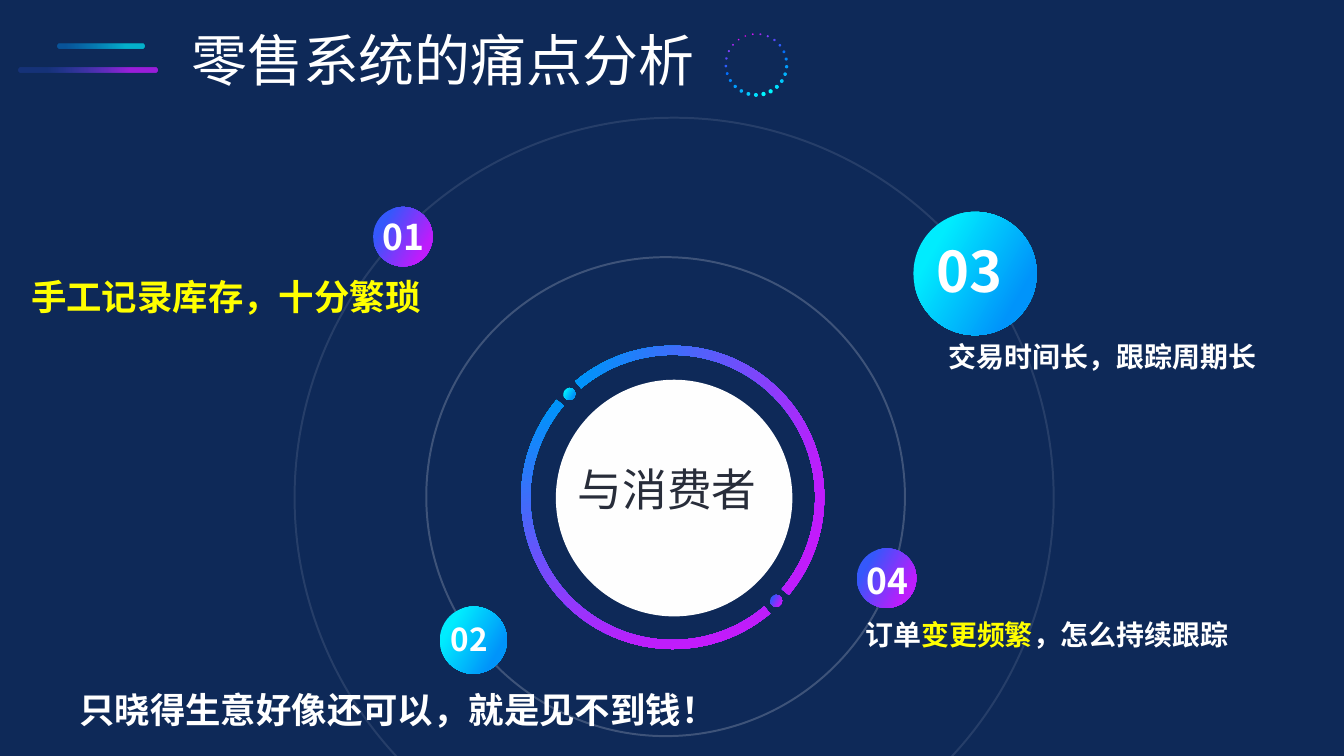
from dataclasses import dataclass
from math import cos, radians, sin

from lxml import etree
from pptx import Presentation
from pptx import util as u
from pptx.dml import color
from pptx.enum import shapes, text
from pptx.oxml import ns

COLS, ROWS = 18.98, 10.67
CELL = u.Inches(1)
KIND = shapes.MSO_SHAPE


@dataclass(frozen=True)
class Theme:
    font: str = "Noto Sans CJK SC"
    back: str = "0E2958"
    white: str = "FFFFFF"
    disc: str = "FEFEFE"
    dark: str = "282D3A"
    gold: str = "FFFF00"
    title: float = 56.9
    core: float = 45.5
    large: float = 36
    small: float = 28.4
    tiny: float = 32
    cool: tuple = ((21, "00ECFE", 100), (80, "0094FA", 100))
    warm: tuple = ((21, "3558FB", 100), (80, "BE1DFB", 100))
    ring: tuple = ((0, "00ECFE", 100), (27, "0094FA", 100),
                   (76, "BE1DFB", 100), (100, "FC02F9", 100))
    upper: tuple = ((10, "0094FA", 40), (79, "00ECFE", 70))
    lower: tuple = ((21, "3558FB", 20), (80, "BE1DFB", 80))
    dots: tuple = ("FC02F9", "D813FB", "A527F0", "7D3EFC", "5748FD",
                   "2D5CFA", "036EFA", "0285FB", "029CFD", "02B2FD",
                   "01C9FD", "00DFFE", "00F7FF")


THEME = Theme()


def place(box):
    return [round(part * CELL) for part in box]


def around(x, y, size):
    return x - size / 2, y - size / 2, size, size


def rgb(code):
    return color.RGBColor.from_string(code)


def tint(node, code, alpha):
    tone = etree.SubElement(node, ns.qn("a:srgbClr"), val=code)
    if alpha < 100:
        etree.SubElement(tone, ns.qn("a:alpha"), val=str(alpha * 1000))


def blend(shape, stops, angle):
    shape.fill.gradient()
    grad = shape.fill._fill._gradFill
    grad.set("rotWithShape", "1")
    for child in list(grad):
        grad.remove(child)
    group = etree.SubElement(grad, ns.qn("a:gsLst"))
    for pos, code, alpha in stops:
        stop = etree.SubElement(group, ns.qn("a:gs"), pos=str(pos * 1000))
        tint(stop, code, alpha)
    etree.SubElement(grad, ns.qn("a:lin"), ang=str(angle * 60000), scaled="0")


def draw(slide, kind, box, fill=None, angle=30):
    shape = slide.shapes.add_shape(kind, *place(box))
    shape.shadow.inherit = False
    shape.line.fill.background()
    if fill is None:
        shape.fill.background()
    elif isinstance(fill, str):
        shape.fill.solid()
        shape.fill.fore_color.rgb = rgb(fill)
    else:
        blend(shape, fill, angle)
    return shape


def write(shape, parts, size, bold=True, align=text.PP_ALIGN.LEFT):
    frame = shape.text_frame
    frame.word_wrap = False
    frame.auto_size = text.MSO_AUTO_SIZE.NONE
    frame.vertical_anchor = text.MSO_ANCHOR.MIDDLE
    para = frame.paragraphs[0]
    para.alignment = align
    for words, code in parts:
        run = para.add_run()
        run.text = words
        font = run.font
        font.size, font.bold, font.name = u.Pt(size), bold, THEME.font
        font.color.rgb = rgb(code)
        face = etree.SubElement(run._r.get_or_add_rPr(), ns.qn("a:ea"))
        face.set("typeface", THEME.font)


def label(slide, box, parts, size, **style):
    write(slide.shapes.add_textbox(*place(box)), parts, size, **style)


def header(slide, box):
    x, y, w, h = box
    title = slide.shapes.title
    title.left, title.top, title.width, title.height = place(
        (x + 2.6, y + 0.31, 7.38, 1.06))
    write(title, [("零售系统的痛点分析", THEME.white)], THEME.title, bold=False)
    for left, top, wide, stops in ((0.26, 0.95, 1.96, THEME.lower),
                                   (0.81, 0.62, 1.23, THEME.upper)):
        bar = draw(slide, KIND.ROUNDED_RECTANGLE,
                   (x + left, y + top, wide, 0.07), stops, 0)
        bar.adjustments[0] = 0.42
    dots(slide, around(x + 10.68, y + 0.91, 0.86))


def dots(slide, box):
    x, y, w, h = box
    count = 2 * len(THEME.dots) - 1
    for i in range(count):
        rank = min(i, count - i)
        turn = radians(249 + i * 360 / count)
        spot = around(x + w / 2 * (1 + cos(turn)),
                      y + h / 2 * (1 + sin(turn)), 0.02 + rank / 300)
        draw(slide, KIND.OVAL, spot, THEME.dots[rank])


def core(slide, box):
    x, y, w, h = box
    mid, row = x + w / 2, y + h / 2
    for start, end, angle in ((275, 85, 60), (95, 265, 120)):
        arc = draw(slide, KIND.BLOCK_ARC, box, THEME.ring, angle)
        arc.rotation = 315
        arc.adjustments[0] = start * 0.6
        arc.adjustments[1] = end * 0.6
        arc.adjustments[2] = 0.03
    for shift, stops in ((-1.46, THEME.cool), (1.46, THEME.warm)):
        draw(slide, KIND.OVAL, around(mid + shift, row + shift, 0.17), stops)
    for shift, size, alpha in ((-0.1, 6.76, 20), (0.02, 10.72, 10)):
        orbit = draw(slide, KIND.OVAL, around(mid + shift, row + shift / 10, size))
        orbit.line.width = u.Pt(2)
        orbit.line.fill.solid()
        paint = orbit.line.fill._fill._solidFill
        for child in list(paint):
            paint.remove(child)
        tint(paint, THEME.white, alpha)
    draw(slide, KIND.OVAL, around(mid + 0.02, row + 0.01, 3.34), THEME.disc)
    label(slide, (mid - 1.44, row - 0.56, 2.75, 0.87),
          [("与消费者", THEME.dark)], THEME.core, bold=False)


def point(slide, box, number, size, stops, shift):
    x, y, w, h = box
    draw(slide, KIND.OVAL, box, stops)
    label(slide, (x + shift[0], y + shift[1], w, h),
          [(number, THEME.white)], size, align=text.PP_ALIGN.CENTER)


def main():
    deck = Presentation()
    deck.slide_width, deck.slide_height = place((COLS, ROWS))
    slide = deck.slides.add_slide(deck.slide_layouts[5])
    slide.background.fill.solid()
    slide.background.fill.fore_color.rgb = rgb(THEME.back)
    header(slide, (0, 0, COLS, 1.6))
    core(slide, around(COLS / 2 + 0.01, 7.02, 4.28))

    t = THEME
    for spot in (
        ((12.9, 2.99, 1.74, 1.74), "03", t.title, t.cool, (-0.08, -0.05)),
        ((5.27, 2.92, 0.84, 0.84), "01", t.large, t.warm, (0.01, 0)),
        ((12.1, 7.74, 0.84, 0.84), "04", t.large, t.warm, (0.01, 0.03)),
        ((6.21, 8.56, 0.95, 0.95), "02", t.tiny, t.cool, (-0.06, -0.02)),
    ):
        point(slide, *spot)
    for note in (
        ((12.12, 8.66, 5.4, 0.58),
         [("订单", t.white), ("变更频繁", t.gold), ("，怎么持续跟踪", t.white)],
         t.small),
        ((13.3, 4.74, 4.6, 0.58), [("交易时间长，跟踪周期长", t.white)], t.small),
        ((0.34, 3.83, 5.77, 0.71), [("手工记录库存，十分繁琐", t.gold)], t.large),
        ((1.02, 9.65, 9.32, 0.71),
         [("只晓得生意好像还可以，就是见不到钱！", t.white)], t.large),
    ):
        label(slide, *note)
    deck.save("out.pptx")


if __name__ == "__main__":
    main()
